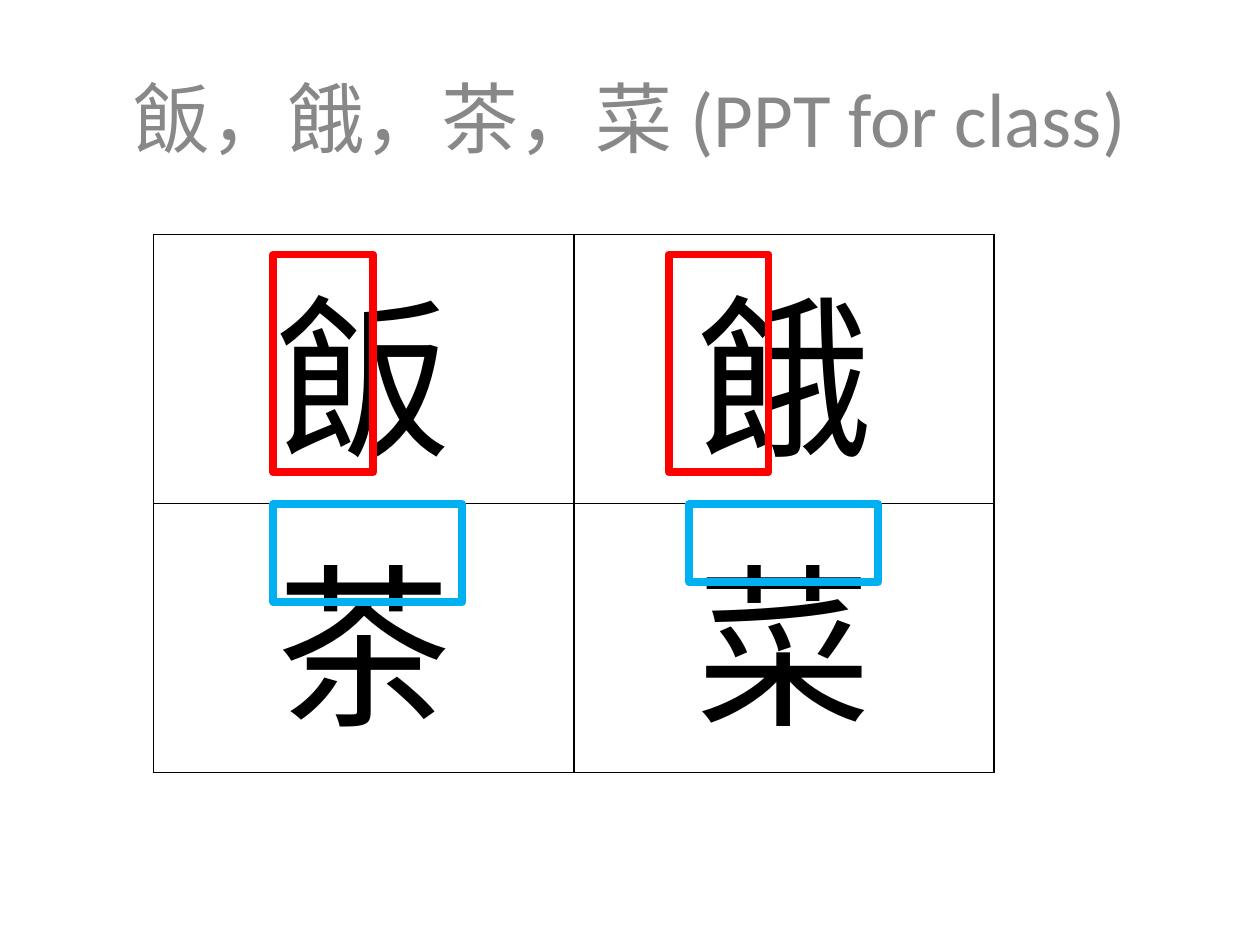
from lxml import etree
from pptx import Presentation
from pptx.dml.color import RGBColor
from pptx.enum import shapes, text
from pptx.oxml import ns
from pptx.util import Inches, Pt

COLORS = {"title": "888888", "ink": "000000", "food": "FF0000", "plant": "00B0F0"}
CHARACTERS = [["飯", "餓"], ["茶", "菜"]]
# Radical frames: colour, left, top, width, height
FRAMES = [
    ("food", 2.17, 2.02, 0.79, 1.73),
    ("food", 5.31, 2.02, 0.79, 1.73),
    ("plant", 2.17, 4, 1.5, 0.78),
    ("plant", 5.47, 4, 1.5, 0.62),
]


def rgb(name):
    return RGBColor.from_string(COLORS[name])


def set_text(tf, content, size, font, color):
    tf.text = content
    p = tf.paragraphs[0]
    p.alignment = text.PP_ALIGN.CENTER
    r = p.runs[0]
    r.font.size = Pt(size)
    r.font.name = font
    r.font.color.rgb = rgb(color)


def add_title(s, content):
    sp = s.shapes.add_textbox(Inches(0.5), Inches(0.3), Inches(9), Inches(1.25))
    tf = sp.text_frame
    tf.word_wrap = True
    tf.vertical_anchor = text.MSO_ANCHOR.MIDDLE
    tf.margin_left = tf.margin_right = Inches(0.1)
    tf.margin_top = tf.margin_bottom = Inches(0.1)
    set_text(tf, content, 44, "Calibri", "title")


def set_borders(cell):
    tc_pr = cell._tc.get_or_add_tcPr()
    for i, side in enumerate(("lnL", "lnR", "lnT", "lnB")):
        ln = etree.Element(ns.qn(f"a:{side}"), w=str(Pt(1)))
        fill = etree.SubElement(ln, ns.qn("a:solidFill"))
        etree.SubElement(fill, ns.qn("a:srgbClr"), val=COLORS["ink"])
        tc_pr.insert(i, ln)


def add_character_table(s, rows):
    frame = s.shapes.add_table(len(rows), len(rows[0]), Inches(1.22), Inches(1.86),
                               Inches(6.67), Inches(4.27))
    table = frame.table
    table.first_row = table.horz_banding = False
    for i, row in enumerate(rows):
        for j, character in enumerate(row):
            cell = table.cell(i, j)
            cell.fill.background()
            set_text(cell.text_frame, character, 100, "Arial", "ink")
            set_borders(cell)


def add_frame(s, color, *box):
    sp = s.shapes.add_shape(shapes.MSO_SHAPE.RECTANGLE, *map(Inches, box))
    sp.shadow.inherit = False
    sp.fill.background()
    sp.line.color.rgb = rgb(color)
    sp.line.width = Pt(4.5)


def main():
    prs = Presentation()
    prs.slide_width, prs.slide_height = Inches(10), Inches(7.5)
    s = prs.slides.add_slide(prs.slide_layouts[6])

    # Title and character grid
    add_title(s, "飯，餓，茶，菜 (PPT for class)")
    add_character_table(s, CHARACTERS)

    # Frames around the shared radicals
    for frame in FRAMES:
        add_frame(s, *frame)

    prs.save("out.pptx")


if __name__ == "__main__":
    main()
